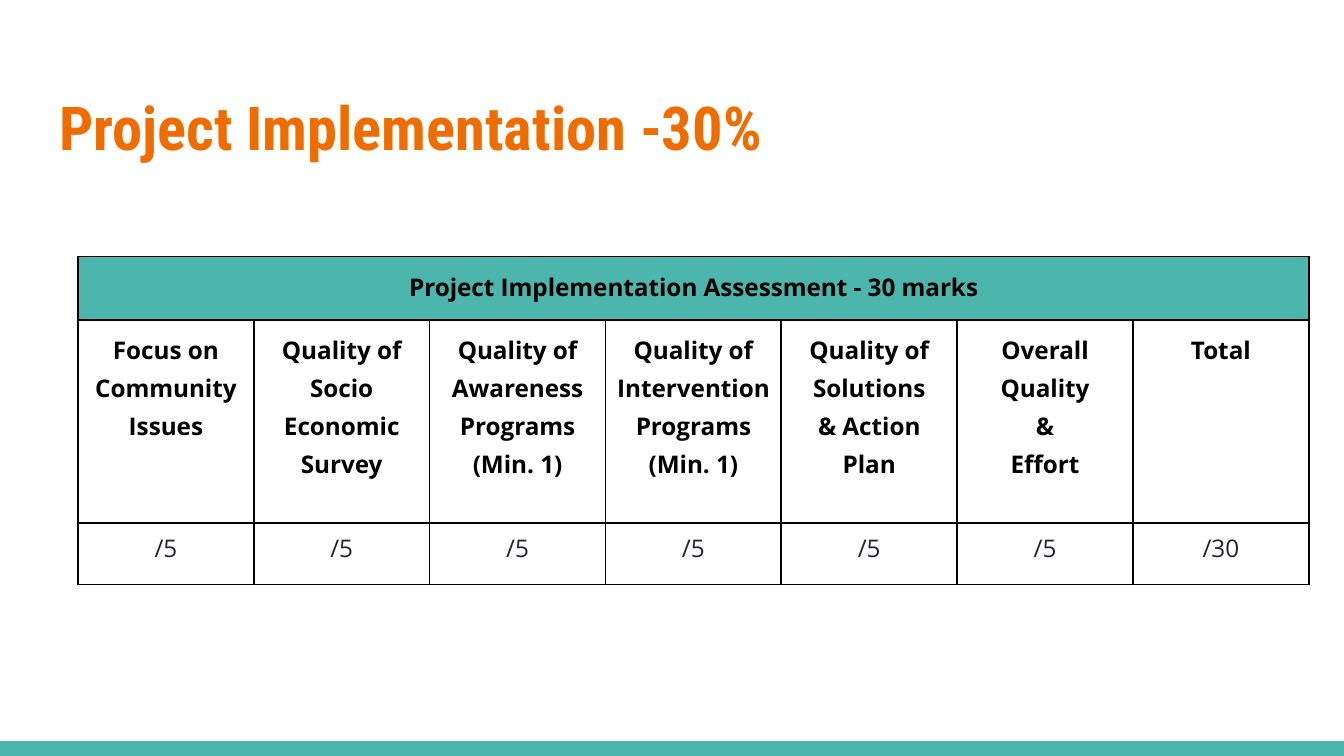
from lxml import etree
from pptx import Presentation
from pptx.dml.color import RGBColor
from pptx.enum.shapes import MSO_SHAPE
from pptx.enum.text import MSO_ANCHOR, MSO_AUTO_SIZE, PP_ALIGN
from pptx.oxml.ns import qn
from pptx.util import Inches, Pt

RECT = MSO_SHAPE.RECTANGLE
TOP = MSO_ANCHOR.TOP
NO_FIT = MSO_AUTO_SIZE.NONE
LEFT, CENTER = PP_ALIGN.LEFT, PP_ALIGN.CENTER

TEAL, ORANGE, BLACK, GREY = "4DB6AC", "EF6C00", "000000", "212529"
SLIDE_W = 10
SLIDE_H = SLIDE_W * 9 / 16
ROW_HEIGHTS = [0.47, 1.51, 0.46]
HEADING = "Project Implementation Assessment - 30 marks"
CRITERIA = [
    ("Focus on\nCommunity\nIssues", "/5"),
    ("Quality of\nSocio\nEconomic\nSurvey", "/5"),
    ("Quality of\nAwareness\nPrograms\n(Min. 1)", "/5"),
    ("Quality of\nIntervention\nPrograms\n(Min. 1)", "/5"),
    ("Quality of\nSolutions\n& Action\nPlan", "/5"),
    ("Overall\nQuality\n&\nEffort", "/5"),
    ("Total", "/30"),
]


def rgb(color):
    return RGBColor.from_string(color)


def write(tf, text, font, size, color, bold, align, spacing):
    tf.text = text
    for p in tf.paragraphs:
        p.alignment = align
        p.line_spacing = spacing
        p.font.name = font
        p.font.size = Pt(size)
        p.font.bold = bold
        p.font.color.rgb = rgb(color)


def set_borders(cell, color, width):
    tc_pr = cell._tc.get_or_add_tcPr()
    for i, side in enumerate(("lnL", "lnR", "lnT", "lnB")):
        ln = etree.Element(qn(f"a:{side}"), w=str(Pt(width)))
        fill = etree.SubElement(ln, qn("a:solidFill"))
        etree.SubElement(fill, qn("a:srgbClr"), val=color)
        tc_pr.insert(i, ln)


def write_cell(cell, text, color=BLACK, bold=True, spacing=1.15, fill=None):
    cell.margin_left = cell.margin_right = Inches(0.07)
    cell.margin_top = cell.margin_bottom = Inches(0.07)
    cell.vertical_anchor = TOP
    write(cell.text_frame, text, "Open Sans", 13, color, bold, CENTER, spacing)
    if fill:
        cell.fill.solid()
        cell.fill.fore_color.rgb = rgb(fill)
    else:
        cell.fill.background()


def add_footer_bar(s, x, y, w, h):
    bar = s.shapes.add_shape(RECT, Inches(x), Inches(y), Inches(w), Inches(h))
    bar.shadow.inherit = False
    bar.fill.solid()
    bar.fill.fore_color.rgb = rgb(TEAL)
    bar.line.fill.background()


def add_title(s, x, y, w, h):
    title = s.shapes.title
    title.left, title.top = Inches(x), Inches(y)
    title.width, title.height = Inches(w), Inches(h)
    tf = title.text_frame
    tf.word_wrap = True
    tf.auto_size = NO_FIT
    tf.vertical_anchor = TOP
    tf.margin_left = tf.margin_right = Inches(0.1)
    tf.margin_top = tf.margin_bottom = Inches(0.1)
    write(tf, "Project Implementation -30%", "Roboto Condensed", 32.4,
          ORANGE, True, LEFT, 1.15)


def add_marks_table(s, x, y, w):
    n = len(CRITERIA)
    table = s.shapes.add_table(len(ROW_HEIGHTS), n, Inches(x), Inches(y),
                               Inches(w), Inches(sum(ROW_HEIGHTS))).table
    table.first_row = table.horz_banding = False
    for row, height in zip(table.rows, ROW_HEIGHTS):
        row.height = Inches(height)
    for col in table.columns:
        col.width = Inches(w / n)
    table.cell(0, 0).merge(table.cell(0, n - 1))
    write_cell(table.cell(0, 0), HEADING, fill=TEAL)
    for c, (criterion, marks) in enumerate(CRITERIA):
        write_cell(table.cell(1, c), criterion)
        write_cell(table.cell(2, c), marks, GREY, False, 1.0)
    for cell in table.iter_cells():
        set_borders(cell, BLACK, 1)


def main():
    prs = Presentation()
    prs.slide_width, prs.slide_height = Inches(SLIDE_W), Inches(SLIDE_H)
    s = prs.slides.add_slide(prs.slide_layouts[5])
    bar_h = 0.11
    add_footer_bar(s, 0, SLIDE_H - bar_h, SLIDE_W, bar_h)
    add_title(s, 0.34, 0.49, 9.32, 0.77)
    add_marks_table(s, 0.58, 1.91, 9.16)
    prs.save("out.pptx")


if __name__ == "__main__":
    main()
